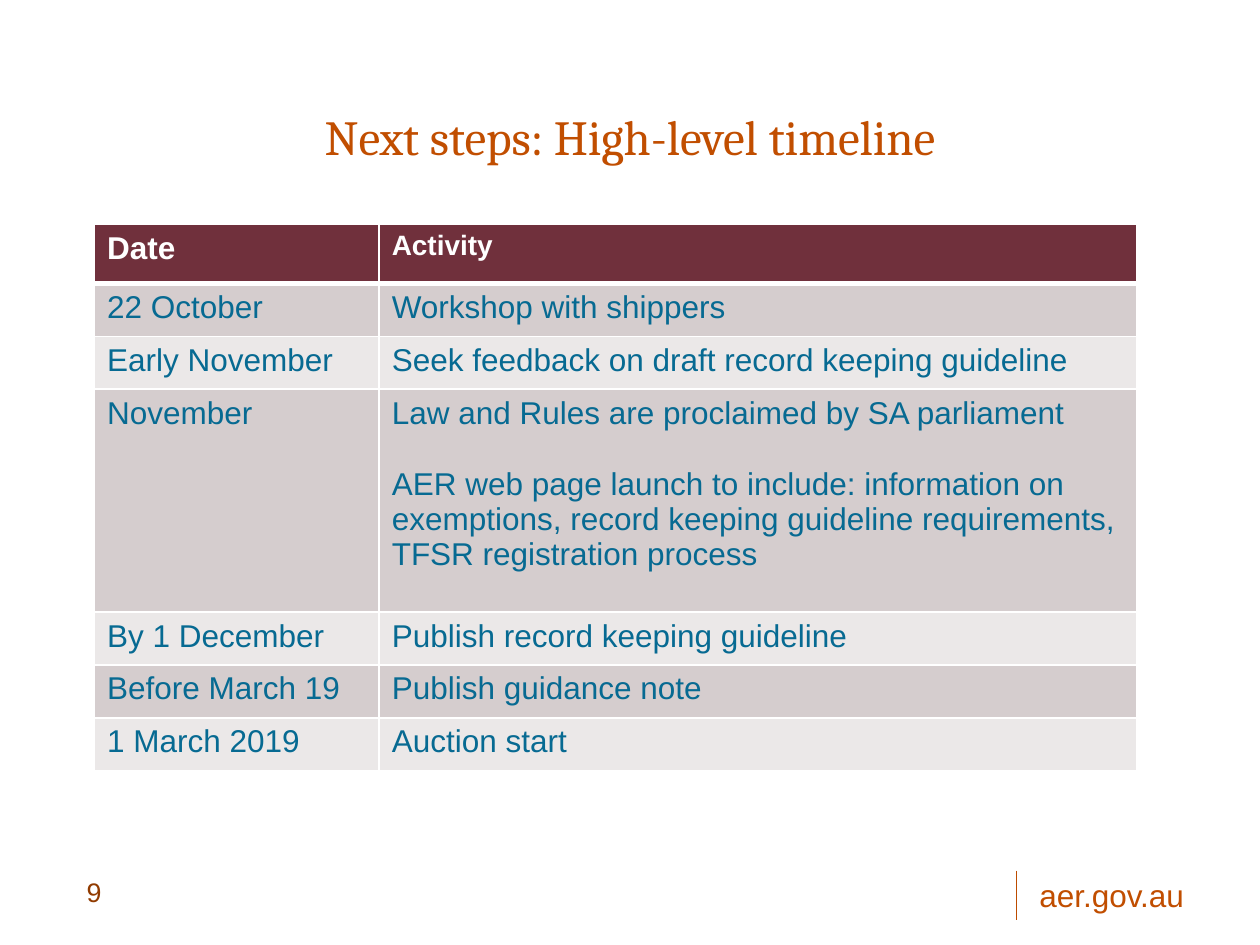
from lxml import etree
from pptx import Presentation
from pptx.dml.color import RGBColor
from pptx.enum import shapes, text
from pptx.oxml import ns
from pptx.util import Inches, Pt

ORANGE = RGBColor(0xC1, 0x4E, 0x00)
RULE_ORANGE = RGBColor(0xBD, 0x4C, 0x00)
BROWN = RGBColor(0x91, 0x3B, 0x00)
TEAL = RGBColor(0x07, 0x6A, 0x92)
WHITE = RGBColor(0xFF, 0xFF, 0xFF)
MAROON = RGBColor(0x70, 0x30, 0x3C)
BANDS = (RGBColor(0xD5, 0xCD, 0xCE), RGBColor(0xEB, 0xE8, 0xE8))

HEADINGS = ("Date", "Activity")
HEADING_SIZES = (18, 16)
TIMELINE = [
    ("22 October", "Workshop with shippers"),
    ("Early November", "Seek feedback on draft record keeping guideline"),
    ("November",
     "Law and Rules are proclaimed by SA parliament\n"
     "AER web page launch to include: information on exemptions, "
     "record keeping guideline requirements, TFSR registration process"),
    ("By 1 December", "Publish record keeping guideline"),
    ("Before March 19", "Publish guidance note"),
    ("1 March 2019", "Auction start"),
]
COLUMN_WIDTHS = (2.26, 6.01)
ROW_HEIGHTS = (0.47, 0.42, 0.42, 1.77, 0.42, 0.42, 0.42)


def write(frame, content, *, size=18, color=TEAL, font="Arial", bold=False,
          align=text.PP_ALIGN.LEFT, gap=0):
    frame.word_wrap = True
    for index, line in enumerate(content.split("\n")):
        paragraph = frame.add_paragraph() if index else frame.paragraphs[0]
        paragraph.alignment = align
        if index:
            paragraph.space_before = Pt(gap)
        run = paragraph.add_run()
        run.text = line
        run.font.size = Pt(size)
        run.font.name = font
        run.font.bold = bold
        run.font.color.rgb = color


def add_label(slide, content, left, top, width, height,
              anchor=text.MSO_ANCHOR.TOP, **style):
    label = slide.shapes.add_textbox(
        Inches(left), Inches(top), Inches(width), Inches(height))
    label.text_frame.vertical_anchor = anchor
    write(label.text_frame, content, **style)


def add_rule(slide, x, top, bottom):
    rule = slide.shapes.add_connector(
        shapes.MSO_CONNECTOR.STRAIGHT,
        Inches(x), Inches(top), Inches(x), Inches(bottom))
    rule.line.color.rgb = RULE_ORANGE
    rule.line.width = Pt(0.75)
    etree.SubElement(rule._element.spPr, ns.qn("a:effectLst"))


def set_borders(cell, **widths):
    properties = cell._tc.get_or_add_tcPr()
    for position, side in enumerate("LRTB"):
        border = etree.Element(ns.qn(f"a:ln{side}"),
                               w=str(Pt(widths.get(side, 1))))
        fill = etree.SubElement(border, ns.qn("a:solidFill"))
        etree.SubElement(fill, ns.qn("a:srgbClr"), val=str(WHITE))
        properties.insert(position, border)


def fill_cell(cell, content, background, borders, **style):
    cell.fill.solid()
    cell.fill.fore_color.rgb = background
    set_borders(cell, **borders)
    write(cell.text_frame, content, **style)


def add_timeline(slide, left, top):
    table = slide.shapes.add_table(
        len(ROW_HEIGHTS), len(COLUMN_WIDTHS), Inches(left), Inches(top),
        Inches(sum(COLUMN_WIDTHS)), Inches(sum(ROW_HEIGHTS))).table
    for column, width in zip(table.columns, COLUMN_WIDTHS):
        column.width = Inches(width)
    for row, height in zip(table.rows, ROW_HEIGHTS):
        row.height = Inches(height)
    for column, (heading, size) in enumerate(zip(HEADINGS, HEADING_SIZES)):
        fill_cell(table.cell(0, column), heading, MAROON, {"B": 3},
                  size=size, color=WHITE, bold=True)
    for row, entry in enumerate(TIMELINE, start=1):
        borders = {"T": 3} if row == 1 else {}
        for column, content in enumerate(entry):
            fill_cell(table.cell(row, column), content,
                      BANDS[(row - 1) % 2], borders, gap=20.5)


def main():
    deck = Presentation()
    deck.slide_width, deck.slide_height = Inches(10), Inches(7.5)
    slide = deck.slides.add_slide(deck.slide_layouts[6])
    add_rule(slide, 8.07, 6.91, 7.3)
    add_label(slide, "aer.gov.au", 8.15, 6.9, 1.57, 0.4, color=ORANGE)
    add_label(slide, "9", 0.59, 6.9, 1.73, 0.32, size=15.3, color=BROWN)
    add_label(slide, "Next steps: High-level timeline", 0.51, 0.6, 8.98, 0.95,
              anchor=text.MSO_ANCHOR.MIDDLE, size=28, color=ORANGE,
              font="Cambria", align=text.PP_ALIGN.CENTER)
    add_timeline(slide, 0.75, 1.78)
    deck.save("out.pptx")


if __name__ == "__main__":
    main()
